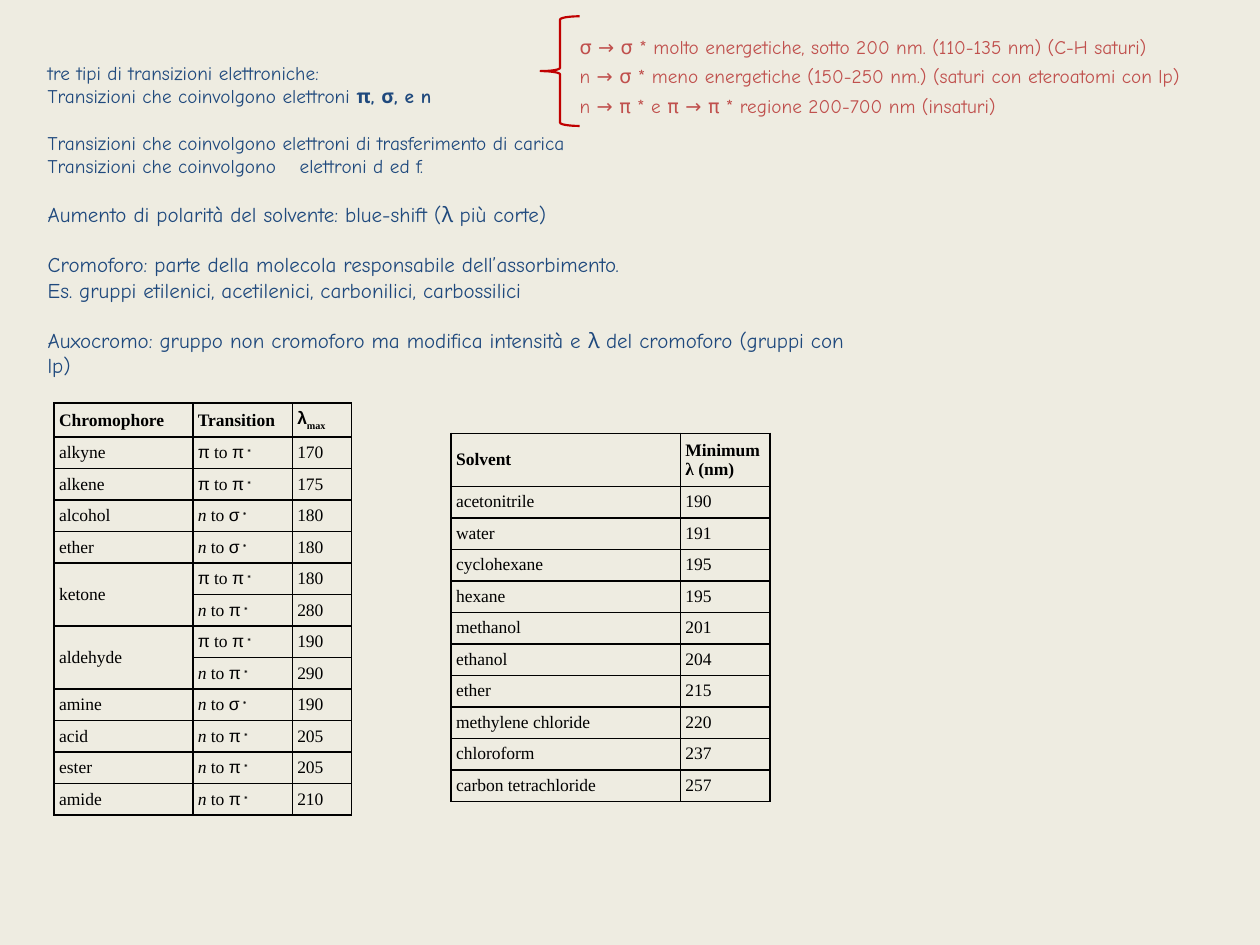
from lxml.etree import SubElement
from pptx import Presentation
from pptx.dml.color import RGBColor
from pptx.enum.shapes import MSO_SHAPE
from pptx.enum.text import MSO_ANCHOR, MSO_AUTO_SIZE
from pptx.oxml.ns import qn
from pptx.util import Inches, Pt

BACKGROUND = RGBColor(0xEE, 0xEC, 0xE1)
NAVY = RGBColor(0x1F, 0x49, 0x7D)
CORAL = RGBColor(0xC0, 0x50, 0x4D)
DARK_RED = RGBColor(0xC0, 0x00, 0x00)
BLACK = RGBColor(0x00, 0x00, 0x00)
ROW_HEIGHT = 0.25


def add_text(paragraph, text, font="Times New Roman", size=10, color=BLACK,
             bold=False, italic=False, baseline=0):
    run = paragraph.add_run()
    run.text = text
    run.font.name = font
    run.font.size = Pt(size)
    run.font.color.rgb = color
    run.font.bold = bold
    run.font.italic = italic
    if baseline:
        run.font._element.set("baseline", str(baseline * 1000))


def add_grid(left, top, widths, row_count, header_height):
    """Add a table without fills, with thin black borders on every cell."""
    height = header_height + ROW_HEIGHT * (row_count - 1)
    grid = slide.shapes.add_table(
        row_count, len(widths), Inches(left), Inches(top),
        Inches(sum(widths)), Inches(height)).table
    grid.first_row = grid.horz_banding = False
    for column, width in zip(grid.columns, widths):
        column.width = Inches(width)
    for row in grid.rows:
        row.height = Inches(ROW_HEIGHT)
    grid.rows[0].height = Inches(header_height)
    for cell in grid.iter_cells():
        cell.vertical_anchor = MSO_ANCHOR.MIDDLE
        cell.margin_left = cell.margin_right = Inches(0.04)
        cell.margin_top = cell.margin_bottom = Inches(0.04)
        properties = cell._tc.get_or_add_tcPr()
        for side in ("lnL", "lnR", "lnT", "lnB"):
            border = SubElement(properties, qn(f"a:{side}"), w=str(Pt(1)))
            fill = SubElement(border, qn("a:solidFill"))
            SubElement(fill, qn("a:srgbClr"), val=str(BLACK))
        cell.fill.background()
    return grid


prs = Presentation()
prs.slide_width = Inches(10)
prs.slide_height = Inches(7.5)
slide = prs.slides.add_slide(prs.slide_layouts[6])
slide.background.fill.solid()
slide.background.fill.fore_color.rgb = BACKGROUND

# Blue notes: each line is (space before in points, plain text, bold text)
transition_types = [
    (0, "tre tipi di transizioni elettroniche:", ""),
    (0, "Transizioni che coinvolgono elettroni ", "π, σ, e n"),
    (13.1, "Transizioni che coinvolgono elettroni di trasferimento di carica", ""),
    (0, "Transizioni che coinvolgono\telettroni d ed f.", ""),
]
definitions = [
    (0, "Aumento di polarità del solvente: blue-shift (λ più corte)", ""),
    (14.4, "Cromoforo: parte della molecola responsabile dell’assorbimento.", ""),
    (0, "Es. gruppi etilenici, acetilenici, carbonilici, carbossilici", ""),
    (14.4, "Auxocromo: gruppo non cromoforo ma modifica intensità e λ del "
           "cromoforo (gruppi con lp)", ""),
]
for top, width, height, size, lines in [
    (0.44, 5, 1.03, 11, transition_types),
    (1.55, 6.61, 1.51, 12, definitions),
]:
    notes = slide.shapes.add_textbox(
        Inches(0.28), Inches(top), Inches(width), Inches(height)).text_frame
    notes.word_wrap = True
    notes.auto_size = MSO_AUTO_SIZE.SHAPE_TO_FIT_TEXT
    for index, (gap, plain, strong) in enumerate(lines):
        line = notes.add_paragraph() if index else notes.paragraphs[0]
        line.space_before = Pt(gap)
        add_text(line, plain, font="Comic Neue", size=size, color=NAVY)
        if strong:
            add_text(line, strong, font="Comic Neue", size=size, color=NAVY,
                     bold=True)

# Brace and the three kinds of transition
brace = slide.shapes.add_shape(
    MSO_SHAPE.LEFT_BRACE, Inches(4.29), Inches(0.13), Inches(0.31), Inches(0.87))
brace.shadow.inherit = False
brace.fill.background()
brace.line.color.rgb = DARK_RED
brace.line.width = Pt(1.25)

energies = [
    "σ → σ * molto energetiche, sotto 200 nm. (110-135 nm) (C-H saturi)",
    "n → σ * meno energetiche (150-250 nm.) (saturi con eteroatomi con lp)",
    "n → π * e π → π * regione 200-700 nm (insaturi)",
]
for index, energy in enumerate(energies):
    energy_note = slide.shapes.add_textbox(
        Inches(4.45), Inches(0.13 + 0.235 * index),
        Inches(5.5), Inches(0.4)).text_frame
    energy_note.word_wrap = True
    energy_note.vertical_anchor = MSO_ANCHOR.BOTTOM
    energy_note.margin_left = Inches(0.15)
    energy_note.margin_bottom = Inches(0.07)
    add_text(energy_note.paragraphs[0], energy, font="Comic Neue", size=11,
             color=CORAL)

# Chromophores: an empty name continues the cell above
chromophores = [
    ("alkyne", "π", "π", 170),
    ("alkene", "π", "π", 175),
    ("alcohol", "n", "σ", 180),
    ("ether", "n", "σ", 180),
    ("ketone", "π", "π", 180),
    ("", "n", "π", 280),
    ("aldehyde", "π", "π", 190),
    ("", "n", "π", 290),
    ("amine", "n", "σ", 190),
    ("acid", "n", "π", 205),
    ("ester", "n", "π", 205),
    ("amide", "n", "π", 210),
]
chromophore_table = add_grid(
    0.43, 3.2, [1.1, 0.79, 0.47], len(chromophores) + 1, 0.27)
name_cell, transition_cell, peak_cell = chromophore_table.rows[0].cells
add_text(name_cell.text_frame.paragraphs[0], "Chromophore", bold=True)
add_text(transition_cell.text_frame.paragraphs[0], "Transition", bold=True)
peak = peak_cell.text_frame.paragraphs[0]
add_text(peak, "λ", font="Arial", bold=True)
add_text(peak, "max", bold=True, baseline=-25)

for row, (name, start, end, wavelength) in enumerate(chromophores, start=1):
    name_cell = chromophore_table.cell(row, 0)
    if name:
        add_text(name_cell.text_frame.paragraphs[0], name)
    else:
        chromophore_table.cell(row - 1, 0).merge(name_cell)
    transition = chromophore_table.cell(row, 1).text_frame.paragraphs[0]
    if start == "n":
        add_text(transition, start, italic=True)
    else:
        add_text(transition, start, font="Arial")
    add_text(transition, " to ")
    add_text(transition, end, font="Arial")
    add_text(transition, "∗", font="Arial", baseline=30)
    add_text(chromophore_table.cell(row, 2).text_frame.paragraphs[0],
             str(wavelength))

# Solvents and their minimum wavelength
solvents = [
    ("Solvent", "Minimum λ (nm)"),
    ("acetonitrile", "190"),
    ("water", "191"),
    ("cyclohexane", "195"),
    ("hexane", "195"),
    ("methanol", "201"),
    ("ethanol", "204"),
    ("ether", "215"),
    ("methylene chloride", "220"),
    ("chloroform", "237"),
    ("carbon tetrachloride", "257"),
]
solvent_table = add_grid(3.58, 3.44, [1.82, 0.71], len(solvents), 0.42)
for row, entries in enumerate(solvents):
    for column, entry in enumerate(entries):
        add_text(solvent_table.cell(row, column).text_frame.paragraphs[0],
                 entry, bold=row == 0)

prs.save("out.pptx")
